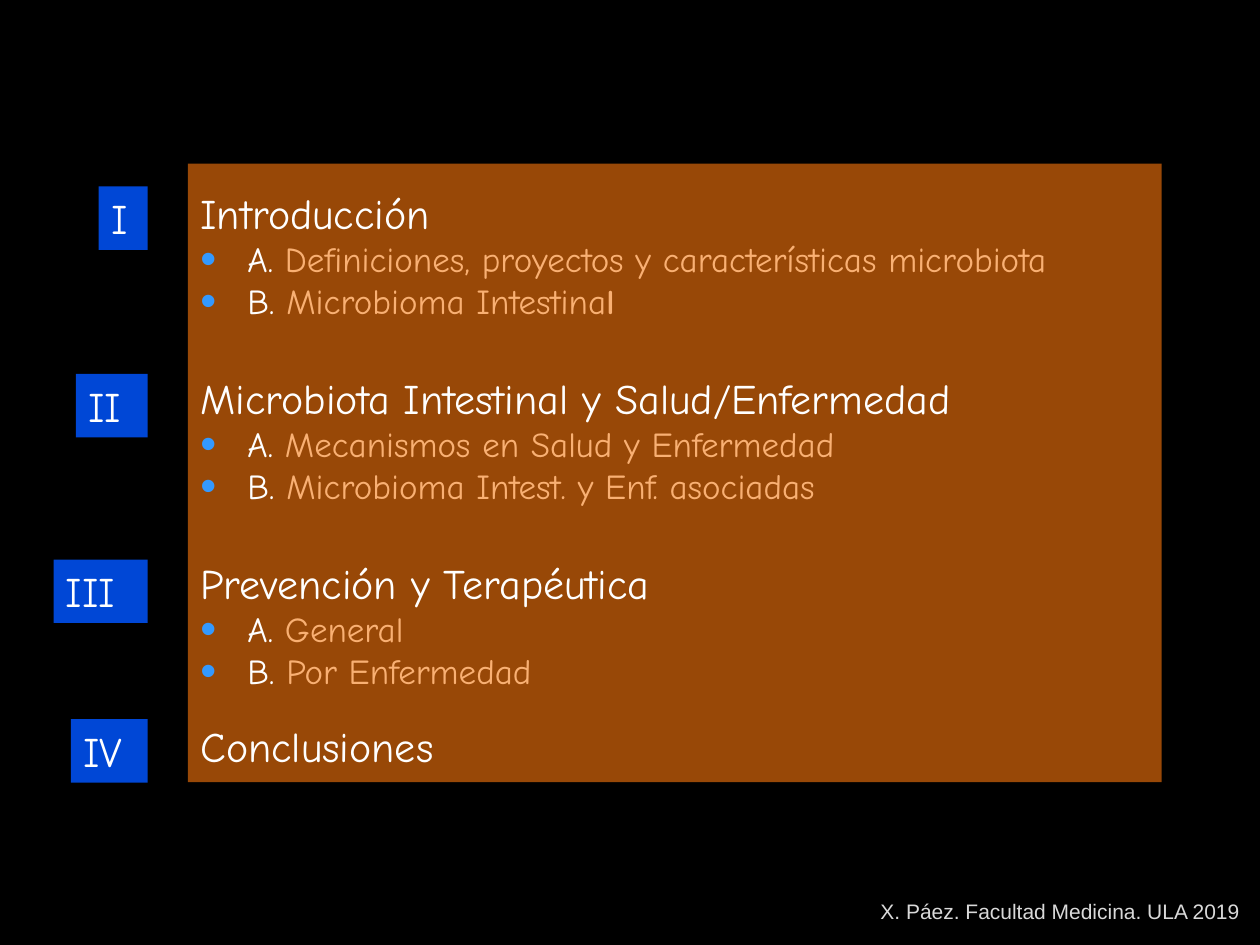
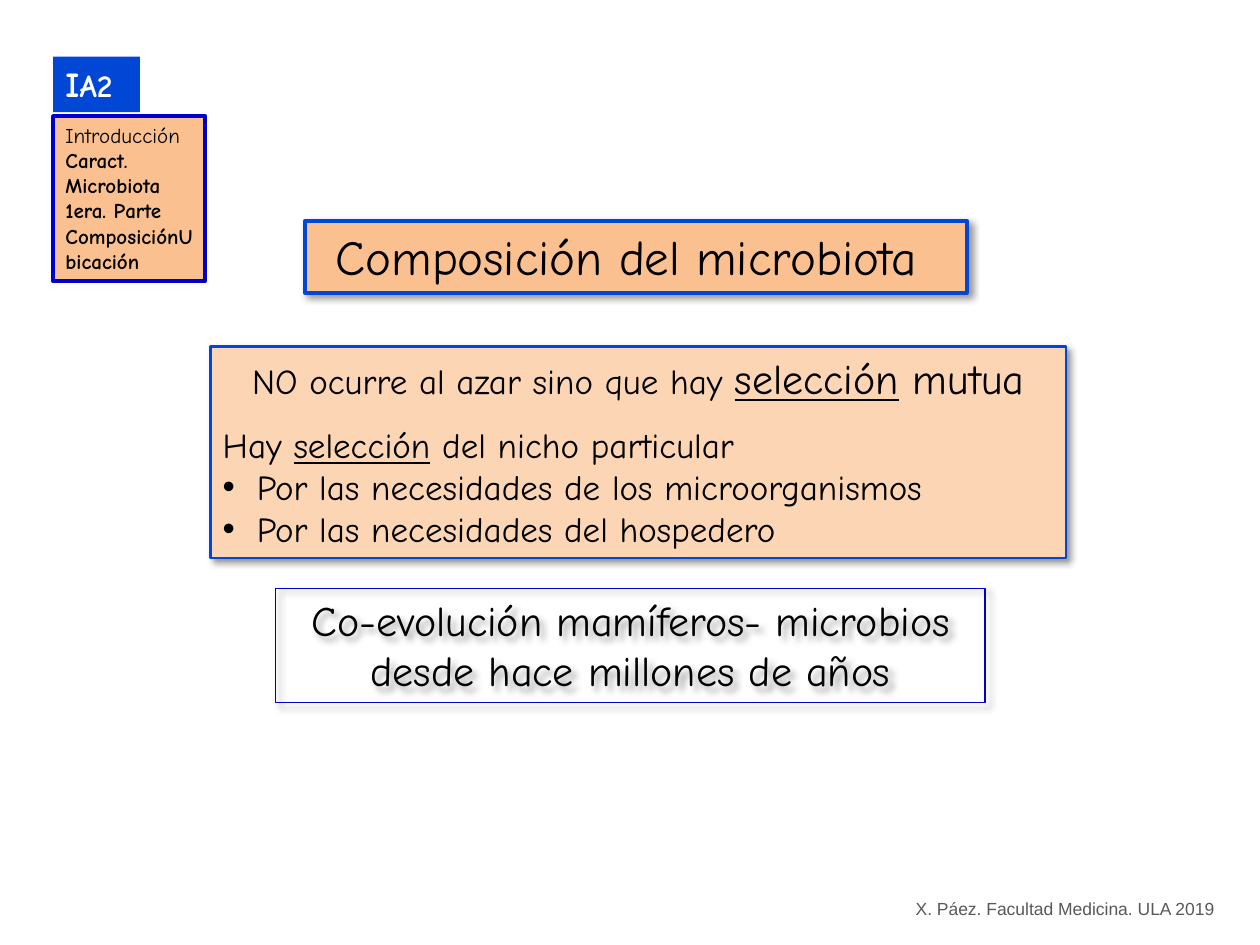
from lxml import etree
from pptx import Presentation
from pptx import util as u
from pptx.dml.color import RGBColor
from pptx.enum import shapes, text
from pptx.oxml.ns import qn

COLORS = {
    "black": "000000", "white": "FFFFFF", "blue": "0047D6", "navy": "0000CC",
    "brown": "984807", "orange": "F9B073", "peach": "FAC090", "cream": "FCD5B5",
    "bullet": "3399FF", "light_gray": "D9D9D9", "gray": "595959",
}
BODY_FONT = "Comic Neue"
FOOTER_FONT = "Arial"
FOOTER = "X. Páez. Facultad Medicina. ULA 2019"

SECTIONS = [
    ("I", 3.76, 0.99, 0, "Introducción", [
        [("Definiciones, proyectos y características microbiota", {})],
        [("Microbioma Intestina", {}), ("l", {"bold": True})]]),
    ("II", 7.54, 1.45, 28.8, "Microbiota Intestinal y Salud/Enfermedad", [
        [("Mecanismos en Salud y Enfermedad", {})],
        [("Microbioma Intest. y Enf. asociadas", {})]]),
    ("III", 11.28, 1.9, 28.8, "Prevención y Terapéutica", [
        [("General", {})],
        [("Por Enfermedad", {})]]),
    ("IV", 14.5, 1.55, 16.8, "Conclusiones", []),
]
TAGS_RIGHT = 2.98


def rgb(color):
    return RGBColor.from_string(COLORS[color])


def add_slide(deck, background):
    slide = deck.slides.add_slide(deck.slide_layouts[6])
    slide.background.fill.solid()
    slide.background.fill.fore_color.rgb = rgb(background)
    return slide


def add_shadow(box):
    effects = box._element.spPr.find(qn("a:effectLst"))
    shadow = etree.SubElement(
        effects, qn("a:outerShdw"), blurRad=str(u.Pt(4)), dist=str(u.Pt(3)),
        dir="2700000", algn="tl", rotWithShape="0")
    tint = etree.SubElement(shadow, qn("a:srgbClr"), val=COLORS["black"])
    etree.SubElement(tint, qn("a:alpha"), val="40000")


def add_box(slide, left, top, width, height, fill=None, line=None,
            line_width=0.75, shadow=False):
    box = slide.shapes.add_shape(
        shapes.MSO_SHAPE.RECTANGLE,
        u.Cm(left), u.Cm(top), u.Cm(width), u.Cm(height))
    box.shadow.inherit = False
    if fill:
        box.fill.solid()
        box.fill.fore_color.rgb = rgb(fill)
    else:
        box.fill.background()
    if line:
        box.line.color.rgb = rgb(line)
        box.line.width = u.Pt(line_width)
    else:
        box.line.fill.background()
    if shadow:
        add_shadow(box)
    box.text_frame.word_wrap = True
    box.text_frame.vertical_anchor = text.MSO_ANCHOR.TOP
    return box.text_frame


def set_bullet(paragraph, indent, color, percent):
    props = paragraph._p.get_or_add_pPr()
    props.set("marL", str(u.Cm(indent)))
    props.set("indent", str(-u.Cm(indent)))
    tint = etree.SubElement(props, qn("a:buClr"))
    etree.SubElement(tint, qn("a:srgbClr"), val=COLORS[color])
    etree.SubElement(props, qn("a:buSzPct"), val=str(percent * 1000))
    etree.SubElement(props, qn("a:buFont"), typeface=FOOTER_FONT)
    etree.SubElement(props, qn("a:buChar"), char="•")


def write(frame, runs, size, color="black", font=BODY_FONT, centered=False,
          before=0, bullet=None):
    paragraph = frame.paragraphs[0]
    if paragraph.runs:
        paragraph = frame.add_paragraph()
    paragraph.alignment = text.PP_ALIGN.CENTER if centered else text.PP_ALIGN.LEFT
    if before:
        paragraph.space_before = u.Pt(before)
    if bullet:
        set_bullet(paragraph, *bullet)
    paragraph.font.name = font
    paragraph.font.size = u.Pt(size)
    paragraph.font.color.rgb = rgb(color)
    for words, style in [(runs, {})] if isinstance(runs, str) else runs:
        run = paragraph.add_run()
        run.text = words
        if "size" in style:
            run.font.size = u.Pt(style["size"])
        if "color" in style:
            run.font.color.rgb = rgb(style["color"])
        if "bold" in style:
            run.font.bold = style["bold"]
        if "underline" in style:
            run.font.underline = style["underline"]


def add_footer(slide, left, width, size, color):
    footer = slide.shapes.add_textbox(
        u.Cm(left), u.Cm(17.98), u.Cm(width), u.Cm(0.76)).text_frame
    footer.word_wrap = False
    write(footer, FOOTER, size, color, FOOTER_FONT)


def build_outline(deck):
    slide = add_slide(deck, "black")
    add_footer(slide, 17.5, 7.82, 12, "light_gray")
    outline = add_box(slide, 3.79, 3.3, 19.63, 12.47, "brown")
    outline.margin_top = u.Cm(0.48)
    for numeral, top, width, gap, heading, topics in SECTIONS:
        write(outline, heading, 24, "white", before=gap)
        for letter, topic in zip("AB", topics):
            runs = [(words, {"color": "orange", **style}) for words, style in topic]
            write(outline, [(f"{letter}. ", {})] + runs, 20, "white",
                  bullet=(0.95, "bullet", 130))
        tag = add_box(slide, TAGS_RIGHT - width, top, width, 1.28, "blue")
        write(tag, numeral, 24, "white")


def build_composition(deck):
    slide = add_slide(deck, "white")
    add_footer(slide, 18.21, 6.58, 10, "gray")

    selection = add_box(slide, 4.24, 6.98, 17.25, 4.27, "cream", "blue", 1.5, True)
    write(selection, [("NO ocurre al azar sino que hay ", {}),
                      ("selección", {"size": 24, "underline": True}),
                      (" mutua", {"size": 24})], 20, centered=True)
    write(selection, [("Hay ", {}), ("selección", {"underline": True}),
                      (" del nicho particular", {})], 20, before=12)
    for need in ("de los microorganismos", "del hospedero"):
        write(selection, f"Por las necesidades {need}", 20,
              bullet=(0.69, "black", 100))

    title = add_box(slide, 6.15, 4.45, 13.34, 1.45, "peach", "blue", 2.25, True)
    title.margin_right = u.Cm(0.64)
    write(title, "Composición del microbiota", 28, centered=True)

    coevolution = add_box(slide, 5.56, 11.86, 14.3, 2.31, line="navy", shadow=True)
    for phrase in ("Co-evolución mamíferos- microbios", "desde hace millones de años"):
        write(coevolution, phrase, 24, centered=True)

    tag = add_box(slide, 1.07, 1.14, 1.75, 1.12, "blue")
    write(tag, [("I", {"size": 20, "bold": True}), ("A2", {"bold": True})], 18, "white")

    topic = add_box(slide, 1.07, 2.34, 3.07, 3.33, "peach", "navy", 2.25)
    write(topic, "Introducción", 12)
    for part in ("Caract.", "Microbiota", "1era. Parte", "ComposiciónUbicación"):
        write(topic, [(part, {"bold": True})], 12)


def main():
    deck = Presentation()
    deck.slide_width, deck.slide_height = u.Cm(25.4), u.Cm(19.05)
    build_outline(deck)
    build_composition(deck)
    deck.save("out.pptx")


if __name__ == "__main__":
    main()
